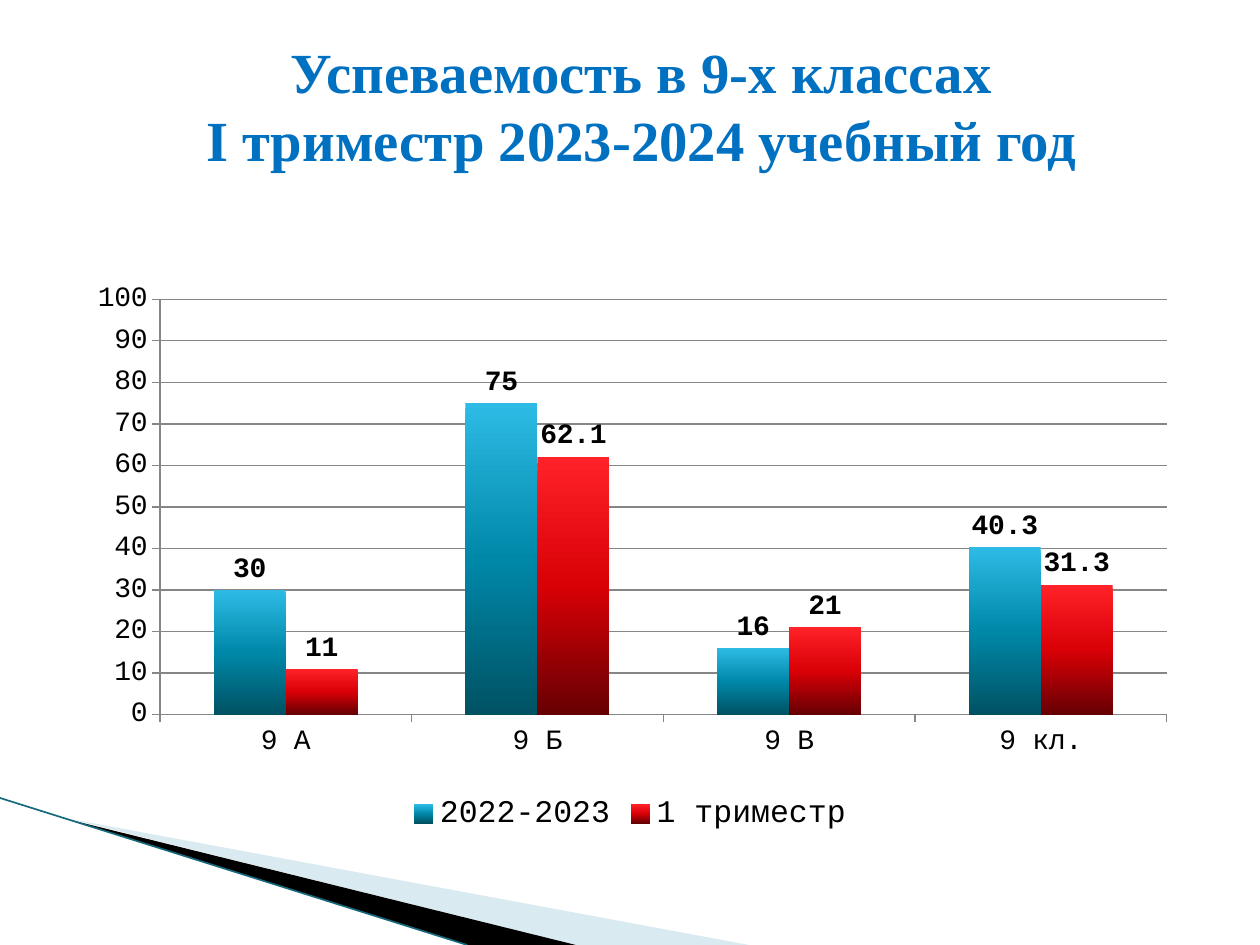
from lxml.etree import SubElement
from pptx import Presentation
from pptx.chart.data import CategoryChartData
from pptx.dml.color import RGBColor
from pptx.enum.chart import XL_CHART_TYPE, XL_LABEL_POSITION, XL_LEGEND_POSITION, XL_TICK_MARK
from pptx.enum.shapes import MSO_CONNECTOR
from pptx.enum.text import MSO_ANCHOR, PP_ALIGN
from pptx.oxml import parse_xml
from pptx.oxml.ns import nsdecls, qn
from pptx.util import Pt

TITLE = "Успеваемость в 9-х классах\vI триместр 2023-2024 учебный год"
CLASSES = ["9 А", "9 Б", "9 В", "9 кл."]
SERIES = [
    ("2022-2023", [30, 75, 16, 40.3], ["2DBBE5", "0088A9", "005263"]),
    ("1 триместр", [11, 62.1, 21, 31.3], ["FF2229", "D90006", "660003"]),
]
PLOT = {"x": 0.076, "y": 0.117, "w": 0.908, "h": 0.681}


def color(code):
    """Turn a hex string into a colour."""
    return RGBColor.from_string(code)


def style(font, size, code, name, bold=False):
    """Set the main traits of a font."""
    font.size, font.name, font.bold = Pt(size), name, bold
    font.color.rgb = color(code)


def wedge(slide, points, code, alpha=100):
    """Draw a filled outline through points."""
    build = slide.shapes.build_freeform(*points[0], scale=Pt(1))
    build.add_line_segments(points[1:], close=True)
    shape = build.convert_to_shape()
    shape.shadow.inherit = False
    shape.line.fill.background()
    shape.fill.solid()
    shape.fill.fore_color.rgb = color(code)
    if alpha < 100:
        node = shape.fill._xPr.find(".//" + qn("a:srgbClr"))
        SubElement(node, qn("a:alpha"), val=str(alpha * 1000))


def corner(slide, x, y, w, h):
    """Draw the wedges and the edge line in the lower corner."""
    base = y + h
    wedge(slide, [(x + 39.6, y + 12.5), (x + w, base), (x + 328, base)], "A0CBDC", 40)
    wedge(slide, [(x + 38.2, y + 11.5), (x + 329, base), (x + 267, base)], "000000")
    ends = [Pt(v) for v in (x, y, x + 267, base)]
    edge = slide.shapes.add_connector(MSO_CONNECTOR.STRAIGHT, *ends)
    edge.line.color.rgb = color("16697A")
    edge.line.width = Pt(0.95)
    SubElement(edge._element.spPr, qn("a:effectLst"))


def title(slide, x, y, w, h):
    """Write the two-line heading."""
    frame = slide.shapes.add_textbox(Pt(x), Pt(y), Pt(w), Pt(h)).text_frame
    frame.word_wrap = True
    frame.vertical_anchor = MSO_ANCHOR.TOP
    frame.margin_top = frame.margin_bottom = 0
    para = frame.paragraphs[0]
    para.text = TITLE
    para.alignment = PP_ALIGN.CENTER
    para.line_spacing = Pt(39)
    for run in para.runs:
        style(run.font, 32.4, "0070C0", "Times New Roman", True)


def shade(series, codes):
    """Fill the bars of a series from top to bottom."""
    stops = "".join(
        f'<a:gs pos="{i * 50000}"><a:srgbClr val="{code}"/></a:gs>'
        for i, code in enumerate(codes)
    )
    fill = parse_xml(
        f'<a:gradFill {nsdecls("a")} rotWithShape="1"><a:gsLst>{stops}</a:gsLst>'
        '<a:lin ang="5400000" scaled="0"/></a:gradFill>'
    )
    series.format.fill.background()
    props = series._element.spPr
    props.replace(props.find(qn("a:noFill")), fill)


def place(chart):
    """Fix the inner plot area within the chart."""
    area = chart._chartSpace.chart.plotArea
    for old in area.findall(qn("c:layout")):
        area.remove(old)
    parts = [("layoutTarget", "inner"), ("xMode", "edge"), ("yMode", "edge"), *PLOT.items()]
    tags = "".join(f'<c:{tag} val="{val}"/>' for tag, val in parts)
    area.insert(0, parse_xml(
        f'<c:layout {nsdecls("c")}><c:manualLayout>{tags}</c:manualLayout></c:layout>'
    ))


def graph(slide, x, y, w, h):
    """Add the column chart of results by class."""
    data = CategoryChartData()
    data.categories = CLASSES
    for name, values, _ in SERIES:
        data.add_series(name, values)
    box = [Pt(v) for v in (x, y, w, h)]
    chart = slide.shapes.add_chart(XL_CHART_TYPE.COLUMN_CLUSTERED, *box, data).chart
    chart.has_title = False
    style(chart.font, 18, "000000", "Courier New")
    chart.has_legend = True
    chart.legend.position = XL_LEGEND_POSITION.BOTTOM
    chart.legend.include_in_layout = False
    for axis in (chart.category_axis, chart.value_axis):
        style(axis.tick_labels.font, 16, "000000", "Courier New")
        axis.major_tick_mark = XL_TICK_MARK.OUTSIDE
        axis.format.line.color.rgb = color("868686")
    scale = chart.value_axis
    scale.minimum_scale, scale.maximum_scale, scale.major_unit = 0, 100, 10
    scale.major_gridlines.format.line.color.rgb = color("868686")
    plot = chart.plots[0]
    plot.vary_by_categories = False
    plot.gap_width, plot.overlap = 150, 0
    for series, (_, _, codes) in zip(plot.series, SERIES):
        shade(series, codes)
        labels = series.data_labels
        labels.show_value = True
        labels.position = XL_LABEL_POSITION.OUTSIDE_END
        style(labels.font, 16, "000000", "Courier New", True)
    place(chart)


def main():
    """Build the slide and save it."""
    deck = Presentation()
    deck.slide_width, deck.slide_height = Pt(720), Pt(540)
    slide = deck.slides.add_slide(deck.slide_layouts[6])
    corner(slide, 0, 456, 428, 84)
    title(slide, 42.5, 21, 648, 119)
    graph(slide, 43.2, 130.3, 633.6, 348.5)
    deck.save("out.pptx")


if __name__ == "__main__":
    main()
